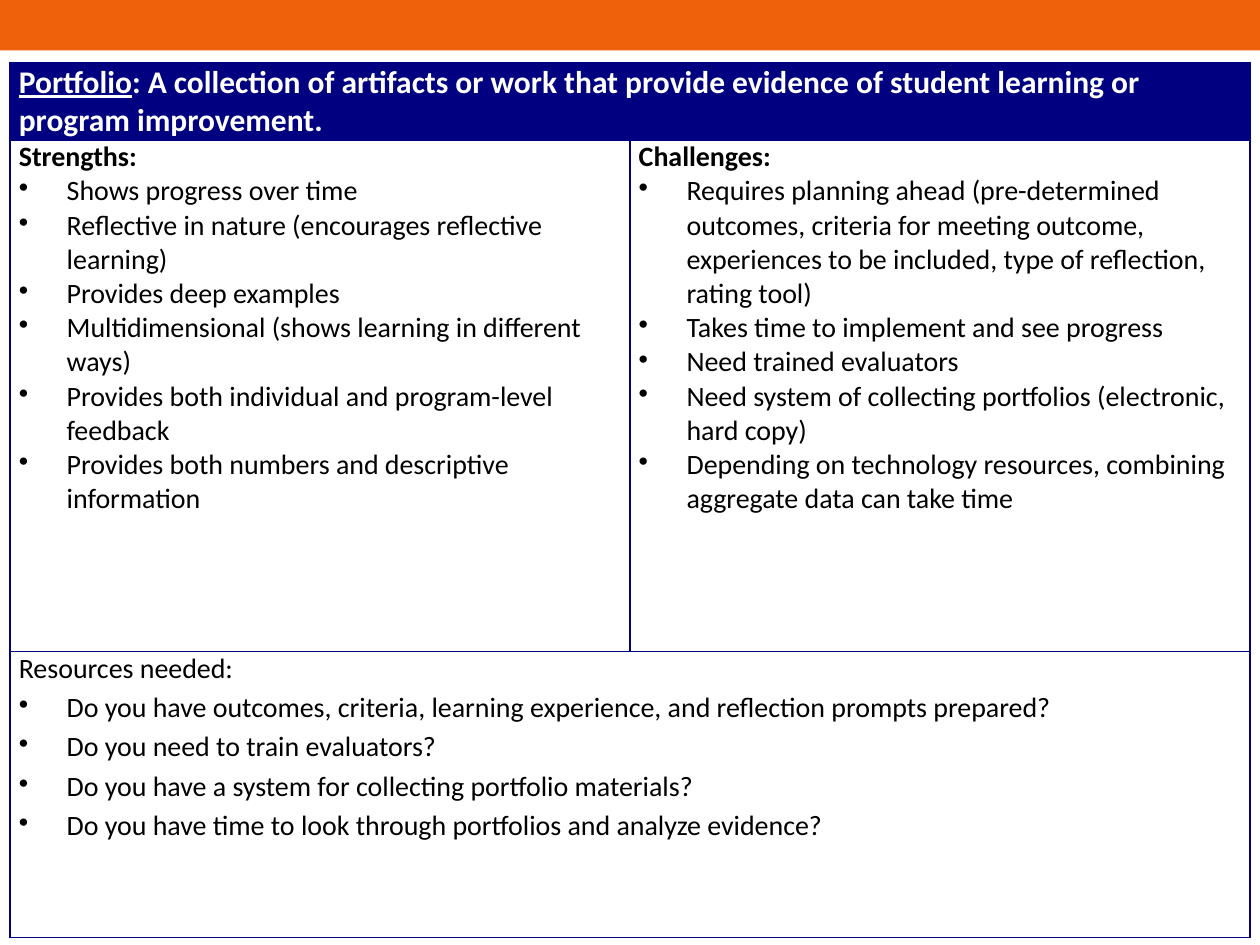
from dataclasses import dataclass
from lxml.etree import SubElement
from pptx import Presentation
from pptx.dml.color import RGBColor
from pptx.enum.shapes import MSO_SHAPE
from pptx.oxml.ns import qn
from pptx.table import _Cell as Cell
from pptx.text.text import _Paragraph as Para
from pptx.util import Inches, Pt


@dataclass(frozen=True)
class Theme:
    font: str = "Calibri"
    head: int = 18
    body: int = 16
    orange: str = "EF620B"
    navy: str = "000080"
    white: str = "FFFFFF"
    black: str = "000000"
    rule: float = 1
    indent: float = 0.38
    inset: float = 0.07


@dataclass(frozen=True)
class Panel:
    row: int
    col: int
    title: str
    items: tuple[str, ...]
    bold: bool = True
    space: float = 1.0


THEME = Theme()
WIDTH, HEIGHT = Inches(10), Inches(7.5)
COLS = (4.92, 4.92)
ROWS = (0.61, 4.06, 2.27)
TERM = "Portfolio"
MEANING = (": A collection of artifacts or work that provide evidence "
           "of student learning or program improvement.")
PANELS = (
    Panel(1, 0, "Strengths:", (
        "Shows progress over time",
        "Reflective in nature (encourages reflective learning)",
        "Provides deep examples",
        "Multidimensional (shows learning in different ways)",
        "Provides both individual and program-level feedback",
        "Provides both numbers and descriptive information",
    )),
    Panel(1, 1, "Challenges:", (
        "Requires planning ahead (pre-determined outcomes, criteria for meeting "
        "outcome, experiences to be included, type of reflection, rating tool)",
        "Takes time to implement and see progress",
        "Need trained evaluators",
        "Need system of collecting portfolios (electronic, hard copy)",
        "Depending on technology resources, combining aggregate data can take time",
    )),
    Panel(2, 0, "Resources needed:", (
        "Do you have outcomes, criteria, learning experience, "
        "and reflection prompts prepared?",
        "Do you need to train evaluators?",
        "Do you have a system for collecting portfolio materials?",
        "Do you have time to look through portfolios and analyze evidence?",
    ), bold=False, space=1.15),
)


def style(para: Para, size: int, color: str, bold: bool) -> None:
    font = para.font
    font.name, font.size, font.bold = THEME.font, Pt(size), bold
    font.color.rgb = RGBColor.from_string(color)


def bullet(para: Para) -> None:
    props = para._p.get_or_add_pPr()
    indent = Inches(THEME.indent)
    props.set("marL", str(indent))
    props.set("indent", str(-indent))
    mark = props.makeelement(qn("a:buChar"), {"char": "•"})
    props.insert_element_before(mark, "a:tabLst", "a:defRPr", "a:extLst")


def frame(cell: Cell) -> None:
    props = cell._tc.get_or_add_tcPr()
    for side in ("lnL", "lnR", "lnT", "lnB"):
        line = SubElement(props, qn(f"a:{side}"), w=str(Pt(THEME.rule)))
        paint = SubElement(line, qn("a:solidFill"))
        SubElement(paint, qn("a:srgbClr"), val=THEME.navy)
    cell.margin_left = cell.margin_right = Inches(THEME.inset)
    cell.margin_top = cell.margin_bottom = 0
    cell.fill.background()


def banner(cell: Cell) -> None:
    cell.fill.solid()
    cell.fill.fore_color.rgb = RGBColor.from_string(THEME.navy)
    para = cell.text_frame.paragraphs[0]
    style(para, THEME.head, THEME.white, True)
    for text, under in ((TERM, True), (MEANING, False)):
        run = para.add_run()
        run.text = text
        run.font.underline = under


def write(cell: Cell, panel: Panel) -> None:
    title = cell.text_frame.paragraphs[0]
    title.text = panel.title
    style(title, THEME.body, THEME.black, panel.bold)
    for item in panel.items:
        para = cell.text_frame.add_paragraph()
        para.text = item
        style(para, THEME.body, THEME.black, False)
        para.line_spacing = panel.space
        bullet(para)


def main() -> None:
    deck = Presentation()
    deck.slide_width, deck.slide_height = WIDTH, HEIGHT
    shapes = deck.slides.add_slide(deck.slide_layouts[6]).shapes

    bar = shapes.add_shape(MSO_SHAPE.RECTANGLE, 0, 0, WIDTH, Inches(0.4))
    bar.shadow.inherit = False
    bar.fill.solid()
    bar.fill.fore_color.rgb = RGBColor.from_string(THEME.orange)
    bar.line.fill.background()

    table = shapes.add_table(len(ROWS), len(COLS), Inches(0.08), Inches(0.5),
                             Inches(sum(COLS)), Inches(sum(ROWS))).table
    table.first_row = table.horz_banding = False
    for col, width in zip(table.columns, COLS):
        col.width = Inches(width)
    for row, height in zip(table.rows, ROWS):
        row.height = Inches(height)
    for cell in table.iter_cells():
        frame(cell)
    for row in (0, 2):
        table.cell(row, 0).merge(table.cell(row, 1))

    banner(table.cell(0, 0))
    for panel in PANELS:
        write(table.cell(panel.row, panel.col), panel)
    deck.save("out.pptx")


if __name__ == "__main__":
    main()
